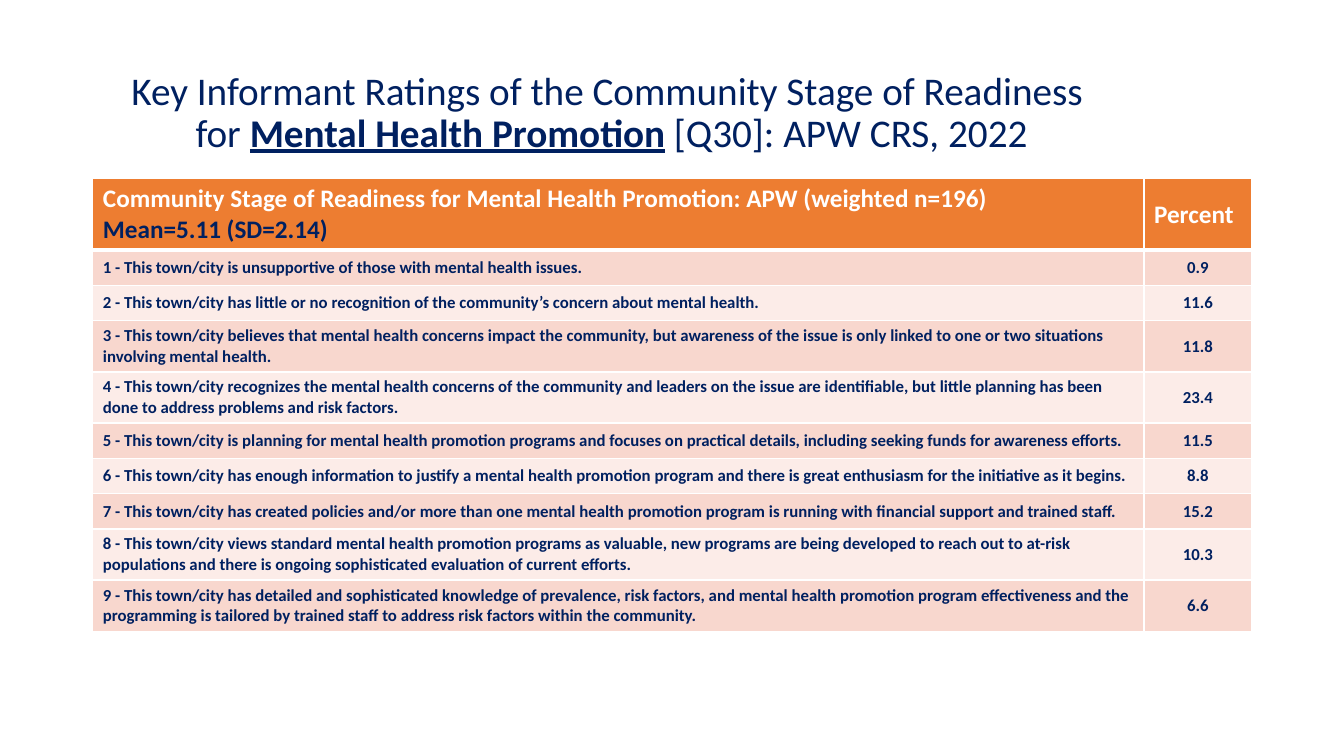
from dataclasses import dataclass

from lxml import etree
from pptx import Presentation, util as u
from pptx.dml.color import RGBColor
from pptx.enum import text
from pptx.oxml.ns import qn

COLORS = {"navy": "002060", "white": "FFFFFF", "header": "ED7D31",
          "odd": "F8D7CE", "even": "FCECE8"}
FONT = "Calibri"
ONE_LINE, TWO_LINES, HEADER_HEIGHT = u.Cm(0.89), u.Cm(1.27), u.Cm(1.76)


@dataclass
class Stage:
    statement: str
    percent: str
    height: int = ONE_LINE


STAGES = [
    Stage("This town/city is unsupportive of those with mental health issues.", "0.9"),
    Stage("This town/city has little or no recognition of the community’s concern "
          "about mental health.", "11.6"),
    Stage("This town/city believes that mental health concerns impact the community, but "
          "awareness of the issue is only linked to one or two situations involving "
          "mental health.", "11.8", TWO_LINES),
    Stage("This town/city recognizes the mental health concerns of the community and "
          "leaders on the issue are identifiable, but little planning has been done to "
          "address problems and risk factors.", "23.4", TWO_LINES),
    Stage("This town/city is planning for mental health promotion programs and focuses on "
          "practical details, including seeking funds for awareness efforts.", "11.5"),
    Stage("This town/city has enough information to justify a mental health promotion "
          "program and there is great enthusiasm for the initiative as it begins.", "8.8"),
    Stage("This town/city has created policies and/or more than one mental health promotion "
          "program is running with financial support and trained staff.", "15.2"),
    Stage("This town/city views standard mental health promotion programs as valuable, new "
          "programs are being developed to reach out to at-risk populations and there is "
          "ongoing sophisticated evaluation of current efforts.", "10.3", TWO_LINES),
    Stage("This town/city has detailed and sophisticated knowledge of prevalence, risk "
          "factors, and mental health promotion program effectiveness and the programming "
          "is tailored by trained staff to address risk factors within the community.",
          "6.6", TWO_LINES),
]


def apply(target, values: dict) -> None:
    for name, value in values.items():
        setattr(target, name, value)


def format_font(font, size: int, color: str, **extras) -> None:
    apply(font, {"name": FONT, "size": u.Pt(size), **extras})
    font.color.rgb = RGBColor.from_string(COLORS[color])


def set_borders(cell, bottom: float) -> None:
    """Draw white lines on the four sides, before the fill is added."""
    properties = cell._tc.get_or_add_tcPr()
    for side, width in {"lnL": 1, "lnR": 1, "lnT": 1, "lnB": bottom}.items():
        line = etree.SubElement(properties, qn(f"a:{side}"), w=str(u.Pt(width)))
        fill = etree.SubElement(line, qn("a:solidFill"))
        etree.SubElement(fill, qn("a:srgbClr"), val=COLORS["white"])


def write_cell(cell, lines: list[tuple[str, str]], size: int, fill: str,
               bottom: float = 1, centred: bool = False) -> None:
    """Fill a cell with (text, colour) lines."""
    set_borders(cell, bottom)
    cell.fill.solid()
    cell.fill.fore_color.rgb = RGBColor.from_string(COLORS[fill])
    cell.vertical_anchor = text.MSO_ANCHOR.MIDDLE
    cell.text = "\n".join(line for line, _ in lines)
    for paragraph, (_, color) in zip(cell.text_frame.paragraphs, lines):
        format_font(paragraph.runs[0].font, size, color, bold=True)
        if centred:
            paragraph.alignment = text.PP_ALIGN.CENTER
    if centred:
        apply(cell, {"margin_left": u.Cm(0.13), "margin_right": u.Cm(0.13),
                     "margin_top": 0, "margin_bottom": 0})


def add_title(slide) -> None:
    title = slide.shapes.title
    apply(title, {"left": u.Cm(2.34), "top": u.Cm(1.02),
                  "width": u.Cm(26.14), "height": u.Cm(3.68)})
    apply(title.text_frame, {"word_wrap": True, "auto_size": text.MSO_AUTO_SIZE.NONE,
                             "vertical_anchor": text.MSO_ANCHOR.MIDDLE})
    heading = title.text_frame.paragraphs[0]
    apply(heading, {"alignment": text.PP_ALIGN.CENTER, "line_spacing": 0.9})
    parts = [("Key Informant Ratings of the Community Stage of Readiness ", False),
             ("for ", False), ("Mental Health Promotion", True),
             (" [Q30]: APW CRS, 2022", False)]
    for index, (words, topic) in enumerate(parts):
        if index == 1:
            heading.add_line_break()
            # The break takes the size of the text around it
            etree.SubElement(heading._p[-1], qn("a:rPr"), sz="2800")
        run = heading.add_run()
        run.text = words
        format_font(run.font, 28, "navy", bold=topic, underline=topic)


def add_ratings(slide) -> None:
    column_widths = [u.Cm(26.49), u.Cm(2.72)]
    row_heights = [HEADER_HEIGHT] + [stage.height for stage in STAGES]
    ratings = slide.shapes.add_table(len(row_heights), 2, u.Cm(2.34), u.Cm(4.5),
                                     sum(column_widths), sum(row_heights)).table
    for column, width in zip(ratings.columns, column_widths):
        column.width = width
    for row, height in zip(ratings.rows, row_heights):
        row.height = height

    # Header row
    scale = [("Community Stage of Readiness for Mental Health Promotion: "
              "APW (weighted n=196)", "white"), ("Mean=5.11 (SD=2.14)", "navy")]
    for column, lines in enumerate([scale, [("Percent", "white")]]):
        write_cell(ratings.cell(0, column), lines, 18, "header", bottom=3)

    # One row per stage, in alternating tints
    for number, stage in enumerate(STAGES, start=1):
        tint = "odd" if number % 2 else "even"
        write_cell(ratings.cell(number, 0), [(f"{number} - {stage.statement}", "navy")],
                   12, tint)
        write_cell(ratings.cell(number, 1), [(stage.percent, "navy")], 12, tint,
                   centred=True)


def main() -> None:
    deck = Presentation()
    apply(deck, {"slide_width": u.Cm(33.87), "slide_height": u.Cm(19.05)})
    slide = deck.slides.add_slide(deck.slide_layouts[5])
    add_title(slide)
    add_ratings(slide)
    deck.save("out.pptx")


if __name__ == "__main__":
    main()
